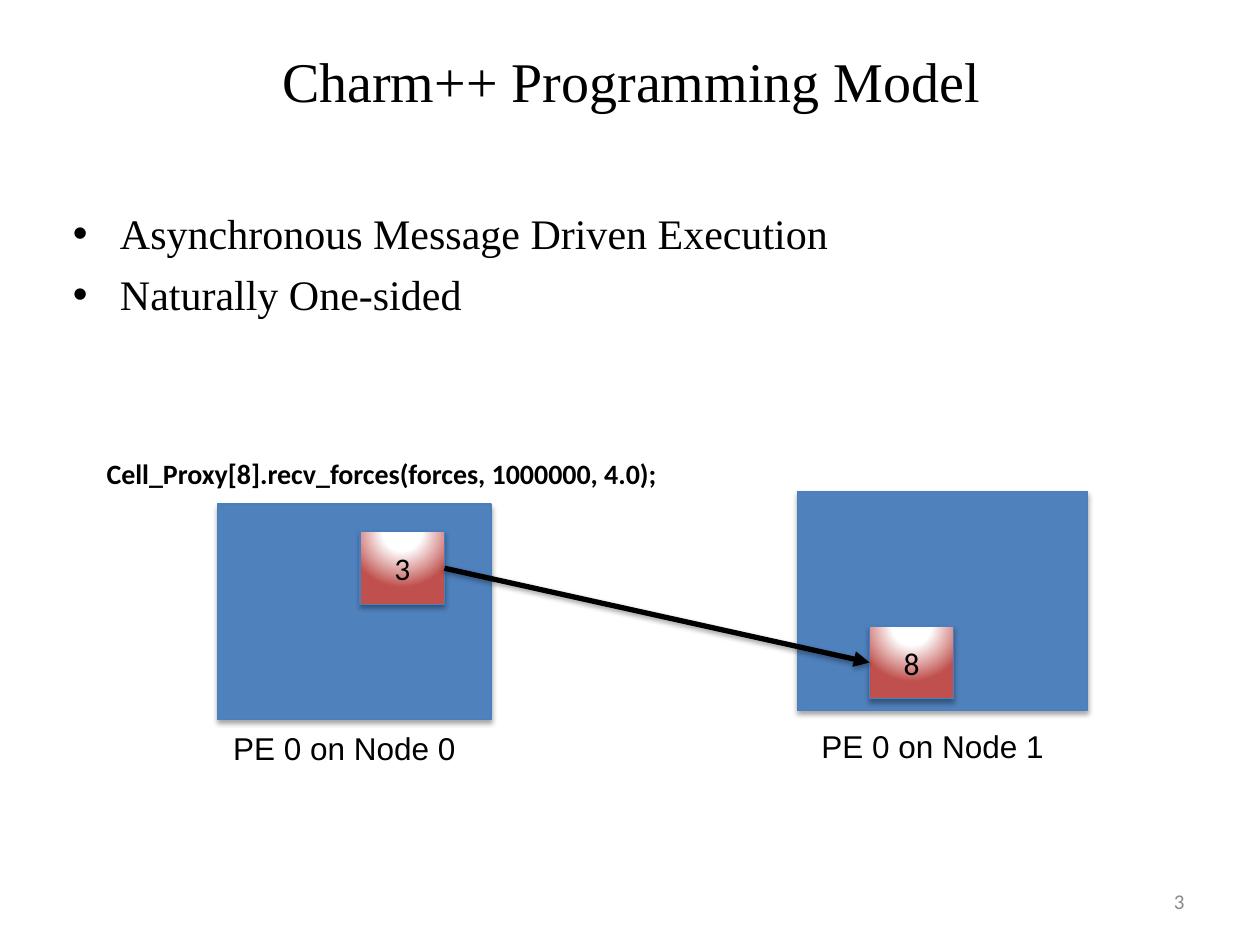
from lxml import etree
from pptx import Presentation
from pptx.dml.color import RGBColor
from pptx.enum.shapes import MSO_CONNECTOR, MSO_SHAPE
from pptx.enum.text import MSO_ANCHOR, PP_ALIGN
from pptx.oxml import parse_xml
from pptx.oxml.ns import nsdecls, qn
from pptx.util import Cm, Pt

LEFT, CENTER, RIGHT = PP_ALIGN.LEFT, PP_ALIGN.CENTER, PP_ALIGN.RIGHT
TOP, MIDDLE = MSO_ANCHOR.TOP, MSO_ANCHOR.MIDDLE
RECTANGLE = MSO_SHAPE.RECTANGLE
STRAIGHT = MSO_CONNECTOR.STRAIGHT
RIGHT_SIDE, LEFT_SIDE = 3, 1

COLORS = {
    "text": "000000",
    "number": "898989",
    "node": "4F81BD",
    "edge": "4B7EBC",
    "glow": "FFFFFF",
    "cell": "C0504D",
}
CELL_WIDTH, CELL_HEIGHT = 1.7, 1.47


def color(name):
    return RGBColor.from_string(COLORS[name])


def style(paragraph, size, font, name="text", align=LEFT, bold=False):
    paragraph.alignment = align
    paragraph.font.size = Pt(size)
    paragraph.font.name = font
    paragraph.font.bold = bold
    paragraph.font.color.rgb = color(name)


def add_text(page, frame, text, size, font, name="text", align=LEFT,
             anchor=TOP, bold=False, wrap=True):
    box = page.shapes.add_textbox(*map(Cm, frame))
    box.text_frame.word_wrap = wrap
    box.text_frame.vertical_anchor = anchor
    para = box.text_frame.paragraphs[0]
    para.text = text
    style(para, size, font, name, align, bold)


def add_bullets(page, frame, items):
    box = page.shapes.add_textbox(*map(Cm, frame))
    box.text_frame.word_wrap = True
    for index, item in enumerate(items):
        para = box.text_frame.add_paragraph() if index else box.text_frame.paragraphs[0]
        para.text = item
        properties = para._p.get_or_add_pPr()
        properties.set("marL", str(Cm(0.95)))
        properties.set("indent", str(-Cm(0.95)))
        bullet_font = etree.SubElement(properties, qn("a:buFont"))
        bullet_font.set("typeface", "Arial")
        etree.SubElement(properties, qn("a:buChar")).set("char", "•")
        style(para, 24, "Times New Roman")
        if index:
            para.space_before = Pt(6)


def set_shadow(shape, opacity, distance):
    properties = shape._element.spPr
    for effects in properties.findall(qn("a:effectLst")):
        properties.remove(effects)
    properties.append(parse_xml(
        f'<a:effectLst {nsdecls("a")}><a:outerShdw blurRad="{Pt(3.1)}" '
        f'dist="{Pt(distance)}" dir="5400000" rotWithShape="0">'
        f'<a:srgbClr val="{COLORS["text"]}"><a:alpha val="{opacity * 1000}"/>'
        '</a:srgbClr></a:outerShdw></a:effectLst>'))


def add_rectangle(page, frame):
    box = page.shapes.add_shape(RECTANGLE, *map(Cm, frame))
    box.fill.solid()
    box.fill.fore_color.rgb = color("node")
    box.line.color.rgb = color("edge")
    box.line.width = Pt(0.75)
    set_shadow(box, 35, 1.8)
    return box


def add_cell(page, left, top, number):
    cell = add_rectangle(page, (left, top, CELL_WIDTH, CELL_HEIGHT))
    stops = "".join(
        f'<a:gs pos="{position * 1000}"><a:srgbClr val="{COLORS[name]}"/></a:gs>'
        for position, name in ((0, "glow"), (35, "glow"), (100, "cell")))
    gradient = parse_xml(
        f'<a:gradFill {nsdecls("a")} rotWithShape="1"><a:gsLst>{stops}</a:gsLst>'
        '<a:path path="circle"><a:fillToRect l="50000" t="-80000" r="50000" '
        'b="180000"/></a:path></a:gradFill>')
    properties = cell._element.spPr
    properties.replace(properties.find(qn("a:solidFill")), gradient)
    cell.text_frame.vertical_anchor = MIDDLE
    para = cell.text_frame.paragraphs[0]
    para.text = number
    style(para, 18, "Calibri", align=CENTER)
    return cell


def add_message(page, sender, receiver):
    arrow = page.shapes.add_connector(STRAIGHT, 0, 0, 0, 0)
    arrow.begin_connect(sender, RIGHT_SIDE)
    arrow.end_connect(receiver, LEFT_SIDE)
    arrow.line.color.rgb = color("text")
    arrow.line.width = Pt(3)
    etree.SubElement(arrow.line._get_or_add_ln(), qn("a:tailEnd")).set("type", "triangle")
    set_shadow(arrow, 38, 1.6)


def main():
    deck = Presentation()
    deck.slide_width, deck.slide_height = Cm(25.4), Cm(19.05)
    page = deck.slides.add_slide(deck.slide_layouts[6])

    add_text(page, (1.3, 0.51, 22.86, 2.21), "Charm++ Programming Model", 32,
             "Times New Roman", align=CENTER, anchor=MIDDLE)
    add_bullets(page, (1.22, 4.06, 22.86, 3.81),
                ["Asynchronous Message Driven Execution", "Naturally One-sided"])
    add_text(page, (18.21, 17.65, 5.92, 1.02), "3", 12, "Calibri", "number",
             RIGHT, MIDDLE)

    add_rectangle(page, (4.39, 10.16, 5.51, 4.34))
    add_rectangle(page, (16.08, 9.91, 5.84, 4.42))
    add_text(page, (4.45, 14.58, 5.72, 1.02), "PE 0 on Node 0", 18, "Arial")
    add_text(page, (16.31, 14.53, 5.03, 1.02), "PE 0 on Node 1", 18, "Arial",
             wrap=False)

    sender = add_cell(page, 7.26, 10.72, "3")
    receiver = add_cell(page, 17.53, 12.62, "8")
    add_message(page, sender, receiver)
    add_text(page, (1.9, 9.07, 11.86, 0.94),
             "Cell_Proxy[8].recv_forces(forces, 1000000, 4.0);", 16, "Calibri",
             bold=True)

    deck.save("out.pptx")


if __name__ == "__main__":
    main()
